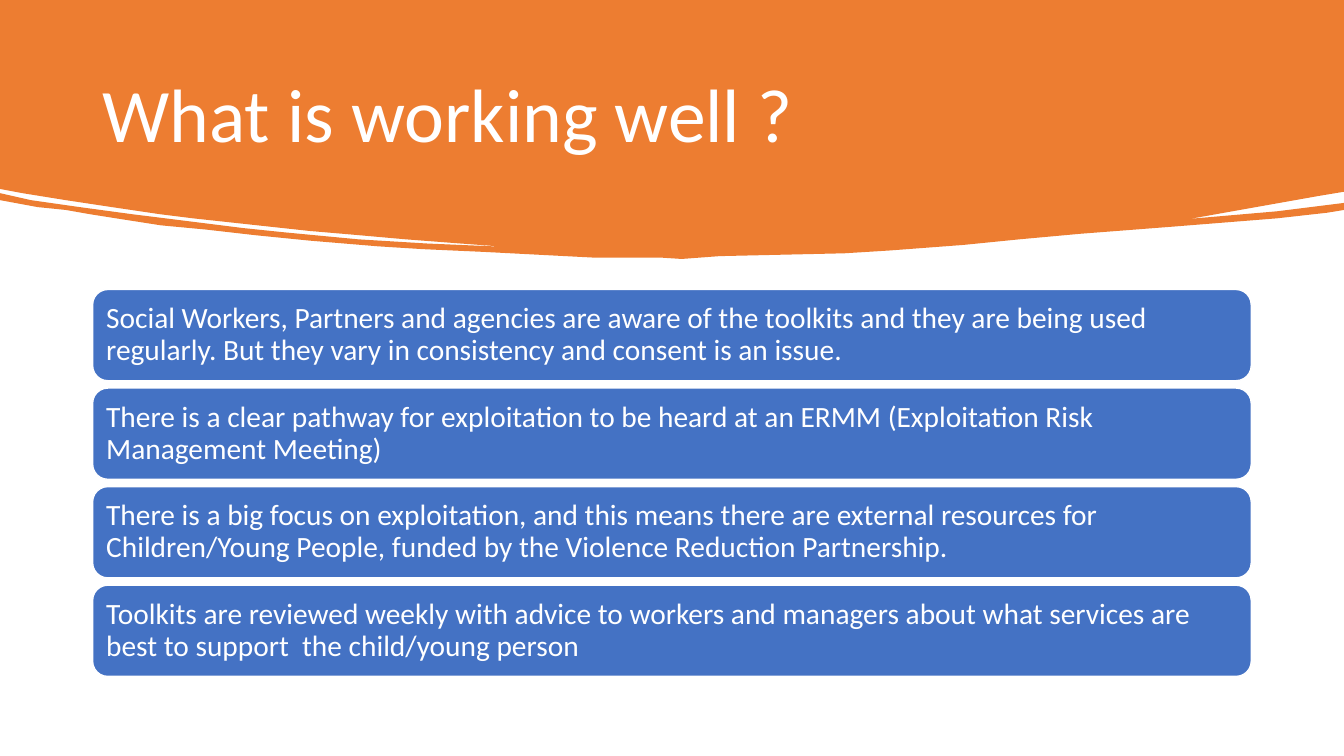
from pptx import Presentation
from pptx.dml.color import RGBColor
from pptx.enum.shapes import MSO_SHAPE
from pptx.enum.text import MSO_ANCHOR, PP_ALIGN
from pptx.util import Pt

ROUNDED = MSO_SHAPE.ROUNDED_RECTANGLE
MIDDLE = MSO_ANCHOR.MIDDLE
LEFT = PP_ALIGN.LEFT

WIDTH, HEIGHT = 960, 540
MARGIN = 66.2
BODY_WIDTH = WIDTH - 2 * MARGIN
CARD_TOP, CARD_HEIGHT, CARD_PITCH = 206.8, 65.2, 70.4

BANNER_RIGHT = [
    (0, 0), (960, 0), (960, 136.8), (942.5, 140.4), (852.5, 156.2),
    (846, 157), (854, 156.2), (911.5, 151.2), (960, 145.4),
]
BANNER_BOTTOM = [
    (960, 150.5), (947.5, 151.9), (911.5, 155.5), (836.6, 162),
    (771.8, 167), (727.9, 171.4), (687.6, 175), (635, 178.6),
    (602.6, 180.7), (514.1, 182.9), (486.7, 185), (470.9, 184.3),
    (422.6, 183.6), (345.6, 180), (302.4, 177.8), (270, 175.7),
    (221.8, 172.1), (182.2, 167.8), (146.9, 164.2), (115.2, 160.6),
    (82.8, 156.2), (64.1, 153.4), (46.8, 150.5), (27.4, 147.6), (0, 142.6),
]
BANNER_LEFT = [
    (0, 138.2), (21.6, 142.6), (56.9, 147.6), (94.3, 153.4),
    (133.9, 158.4), (174.2, 162.7), (203, 165.6), (255.6, 170.6),
    (305.3, 173.5), (352.1, 176.4), (362.9, 176.4), (356.4, 176.4),
    (329, 174.2), (290.2, 171.4), (256.3, 168.5), (221, 164.9),
    (184.3, 161.3), (138.2, 156.2), (113.8, 153.4), (79.9, 148.3),
    (46.8, 143.3), (15.8, 138.2), (0, 135.4),
]

POINTS = [
    "Social Workers, Partners and agencies are aware of the toolkits and they are being used regularly. But they vary in consistency and consent is an issue.",
    "There is a clear pathway for exploitation to be heard at an ERMM (Exploitation Risk Management Meeting)",
    "There is a big focus on exploitation, and this means there are external resources for Children/Young People, funded by the Violence Reduction Partnership.",
    "Toolkits are reviewed weekly with advice to workers and managers about what services are best to support  the child/young person",
]


def color(value):
    return RGBColor.from_string(value)


class Deck:
    font = "Calibri"
    orange, blue, white = "ED7D31", "4472C4", "FFFFFF"

    def __init__(self, prs):
        self.slide = prs.slides.add_slide(prs.slide_layouts[6])

    def paint(self, sp, fill, line=None):
        sp.shadow.inherit = False
        sp.fill.solid()
        sp.fill.fore_color.rgb = color(fill)
        if line:
            sp.line.color.rgb = color(line)
            sp.line.width = Pt(1)
        else:
            sp.line.fill.background()

    def set_text(self, sp, text, size, inset_x, inset_y):
        tf = sp.text_frame
        frame_format = {
            "word_wrap": True, "vertical_anchor": MIDDLE,
            "margin_left": Pt(inset_x), "margin_right": Pt(inset_x),
            "margin_top": Pt(inset_y), "margin_bottom": Pt(inset_y),
        }
        for name, value in frame_format.items():
            setattr(tf, name, value)
        p = tf.paragraphs[0]
        p.alignment = LEFT
        p.line_spacing = 0.9
        r = p.add_run()
        r.text = text
        for name, value in {"name": self.font, "size": Pt(size)}.items():
            setattr(r.font, name, value)
        r.font.color.rgb = color(self.white)

    def outline(self, points):
        builder = self.slide.shapes.build_freeform(*points[0], scale=Pt(1))
        builder.add_line_segments(points[1:], close=True)
        self.paint(builder.convert_to_shape(), self.orange)

    def title(self, text, x, y, w, h):
        sp = self.slide.shapes.add_textbox(Pt(x), Pt(y), Pt(w), Pt(h))
        self.set_text(sp, text, 54, 7.2, 3.6)

    def card(self, text, x, y, w, h):
        sp = self.slide.shapes.add_shape(ROUNDED, Pt(x), Pt(y), Pt(w), Pt(h))
        self.paint(sp, self.blue, self.white)
        self.set_text(sp, text, 21, 6.5, 6.5)


def main():
    prs = Presentation()
    prs.slide_width, prs.slide_height = Pt(WIDTH), Pt(HEIGHT)
    deck = Deck(prs)
    deck.outline(BANNER_RIGHT + BANNER_BOTTOM + BANNER_LEFT)
    deck.title("What is working well ?", MARGIN, 31.7, BODY_WIDTH, 105.8)
    for i, text in enumerate(POINTS):
        deck.card(text, MARGIN, CARD_TOP + i * CARD_PITCH, BODY_WIDTH, CARD_HEIGHT)
    prs.save("out.pptx")


if __name__ == "__main__":
    main()
